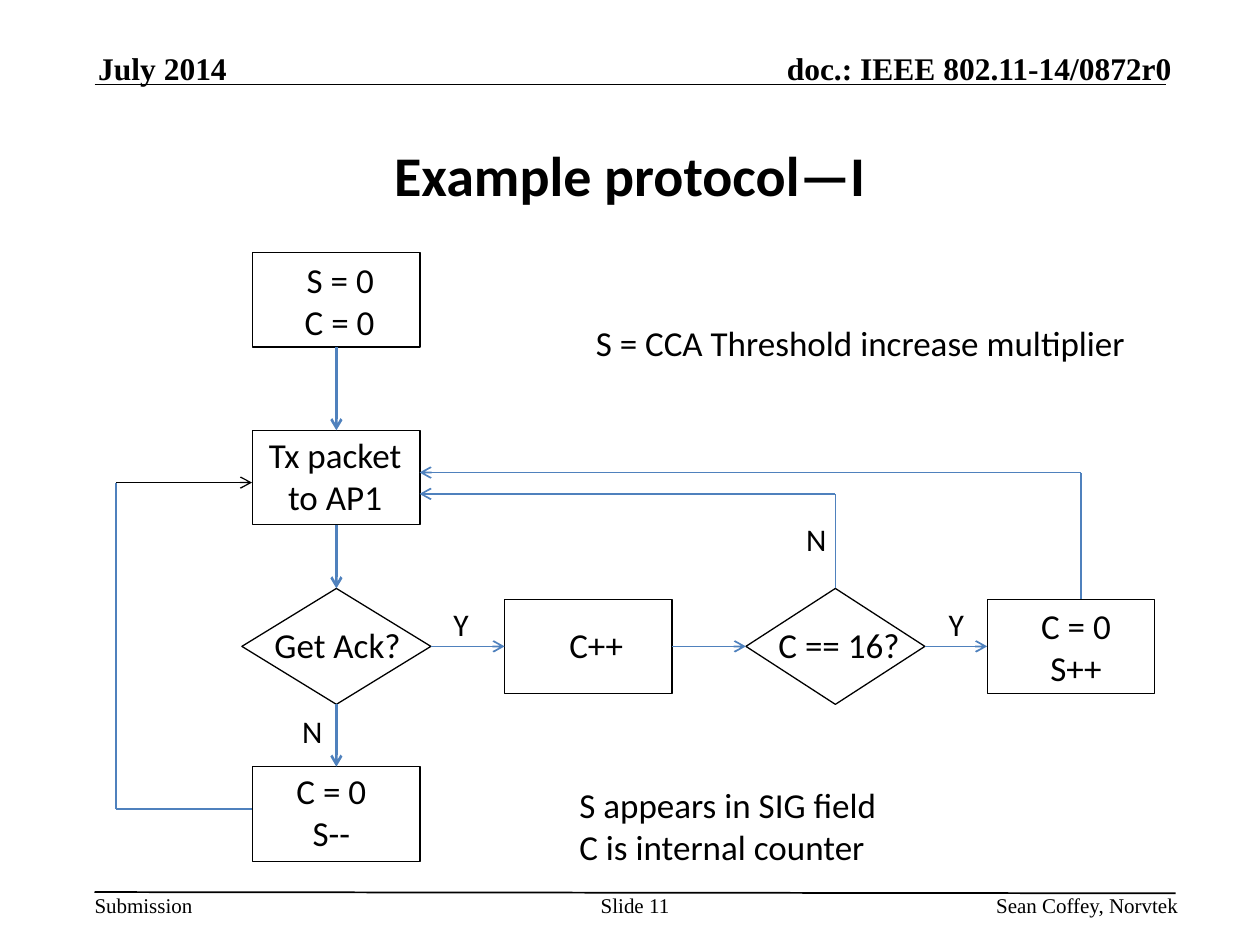
from dataclasses import dataclass

from lxml.etree import SubElement
from pptx import Presentation
from pptx.dml.color import RGBColor
from pptx.enum.shapes import MSO_CONNECTOR as Connector, MSO_SHAPE as Shape
from pptx.enum.text import MSO_ANCHOR as Anchor, PP_ALIGN as Align
from pptx.oxml.ns import qn
from pptx.util import Inches, Pt


@dataclass(frozen=True)
class Theme:
    black: RGBColor = RGBColor(0, 0, 0)
    blue: RGBColor = RGBColor(0x4F, 0x81, 0xBD)
    body_font: str = "Calibri"
    frame_font: str = "Times New Roman"
    title: int = 32
    body: int = 20
    branch: int = 18
    header: int = 18
    footer: int = 12
    spacer: int = 5


theme = Theme()
prs = Presentation()
prs.slide_width, prs.slide_height = Inches(10), Inches(7.5)
slide = prs.slides.add_slide(prs.slide_layouts[6])


def add_text(box, paragraphs, size, font=theme.body_font, bold=False, align=Align.LEFT,
             anchor=Anchor.TOP, wrap=False, inset=(0.1, 0.05)):
    """Each paragraph is a list of (text, size) runs, or a string for a single run."""
    frame = slide.shapes.add_textbox(*map(Inches, box)).text_frame
    frame.word_wrap, frame.vertical_anchor = wrap, anchor
    frame.margin_left = frame.margin_right = Inches(inset[0])
    frame.margin_top = frame.margin_bottom = Inches(inset[1])
    for i, runs in enumerate(paragraphs):
        paragraph = frame.add_paragraph() if i else frame.paragraphs[0]
        paragraph.alignment = align
        for text, run_size in [(runs, size)] if isinstance(runs, str) else runs:
            run = paragraph.add_run()
            run.text = text
            run.font.name, run.font.size, run.font.bold = font, Pt(run_size), bold
            run.font.color.rgb = theme.black


def add_line(start, end, color=theme.blue, width=1, arrow=False):
    """An end is an (x, y) point or a (node, side) pair."""
    joined = [not isinstance(point[0], (int, float)) for point in (start, end)]
    points = [(0, 0) if join else point for point, join in zip((start, end), joined)]
    line = slide.shapes.add_connector(Connector.STRAIGHT, *(Inches(v) for p in points for v in p))
    if joined[0]:
        line.begin_connect(*start)
    if joined[1]:
        line.end_connect(*end)
    line.line.color.rgb, line.line.width = color, Pt(width)
    if arrow:
        SubElement(line.line._get_or_add_ln(), qn("a:tailEnd"), type="arrow")
    SubElement(line._element.spPr, qn("a:effectLst"))


# Header and footer
add_line((0.75, 0.67), (9.25, 0.67), theme.black)
add_line((0.75, 7.08), (9.33, 7.09), theme.black)
for box, text, align in [
    ((0.78, 0.39, 2.6, 0.3), "July 2014", Align.LEFT),
    ((5.47, 0.39, 3.83, 0.3), "doc.: IEEE 802.11-14/0872r0", Align.RIGHT),
]:
    add_text(box, [text], theme.header, theme.frame_font, True, align, Anchor.BOTTOM, True, (0, 0))
for box, text, align in [
    ((0.75, 7.08, 0.78, 0.2), "Submission", Align.LEFT),
    ((4.75, 7.08, 0.58, 0.2), "Slide 11", Align.CENTER),
    ((6.88, 7.08, 2.47, 0.2), "Sean Coffey, Norvtek", Align.RIGHT),
]:
    add_text(box, [text], theme.footer, theme.frame_font, align=align, inset=(0, 0), wrap=True)

# Title
add_text((0.75, 0.75, 8.5, 1.27), ["Example protocol—I"], theme.title, bold=True,
         align=Align.CENTER, anchor=Anchor.MIDDLE, wrap=True)

# Flowchart nodes, placed by their centres
STEM_X, TEST_X, ROW_Y = 2.67, 6.63, 5.13
STEP = (Shape.RECTANGLE, 1.33, 0.75)
nodes = {}
for name, x, y, (kind, width, height) in [
    ("init", STEM_X, 2.38, STEP),
    ("send", STEM_X, 3.79, STEP),
    ("ack", STEM_X, ROW_Y, (Shape.DIAMOND, 1.5, 0.92)),
    ("decrease", STEM_X, 6.46, STEP),
    ("count", 4.67, ROW_Y, STEP),
    ("limit", TEST_X, ROW_Y, (Shape.DIAMOND, 1.42, 0.92)),
    ("increase", 8.5, ROW_Y, STEP),
]:
    node = slide.shapes.add_shape(kind, Inches(x - width / 2), Inches(y - height / 2),
                                  Inches(width), Inches(height))
    node.shadow.inherit = False
    node.fill.background()
    node.line.color.rgb, node.line.width = theme.black, Pt(0.75)
    nodes[name] = node

# Node wording
for box, paragraphs, align, wrap in [
    ((2.32, 2, 0.93, 0.77), [[(" ", theme.spacer), ("S = 0", theme.body)], "C = 0"],
     Align.LEFT, True),
    ((1.91, 3.39, 1.5, 0.77), ["Tx packet to AP1"], Align.CENTER, True),
    ((2.08, 4.9, 1.22, 0.44), ["Get Ack?"], Align.LEFT, False),
    ((2.25, 6.06, 0.76, 0.77), ["C = 0", "S--"], Align.CENTER, False),
    ((4.42, 4.9, 0.63, 0.44), ["C++"], Align.LEFT, False),
    ((6.08, 4.9, 1.17, 0.44), ["C == 16?"], Align.LEFT, False),
    ((8.16, 4.75, 0.76, 0.77), ["C = 0", "S++"], Align.CENTER, True),
]:
    add_text(box, paragraphs, theme.body, align=align, wrap=wrap)

# Forward arrows: down the stem, then along the row
TOP, LEFT, BOTTOM, RIGHT = range(4)
for chain, leave, enter, width in [
    (("init", "send", "ack", "decrease"), BOTTOM, TOP, 1.5),
    (("ack", "count", "limit", "increase"), RIGHT, LEFT, 1),
]:
    for source, target in zip(chain, chain[1:]):
        add_line((nodes[source], leave), (nodes[target], enter), width=width, arrow=True)

# Return loops to the send step
add_line((2, 6.42), (0.92, 6.42))
add_line((0.92, 6.42), (0.92, 3.83))
add_line((0.92, 3.83), (2, 3.83), theme.black, 0.75, arrow=True)
for start, x, y in [((nodes["limit"], TOP), TEST_X, 3.92), ((8.58, 4.75), 8.58, 3.75)]:
    add_line(start, (x, y), width=0.75)
    add_line((x, y), (3.33, y), arrow=True)

# Branch labels
for x, y, answer in [(2.3, 5.6, "N"), (6.3, 4.08, "N"), (3.5, 4.75, "Y"), (7.43, 4.75, "Y")]:
    add_text((x, y, 0.36 if answer == "N" else 0.32, 0.4), [answer], theme.branch)

# Explanations
add_text((4.63, 2.5, 4.45, 0.44), ["S = CCA Threshold increase multiplier"], theme.body)
add_text((4.5, 6.17, 2.67, 0.77), ["S appears in SIG field", "C is internal counter"], theme.body)

prs.save("out.pptx")
